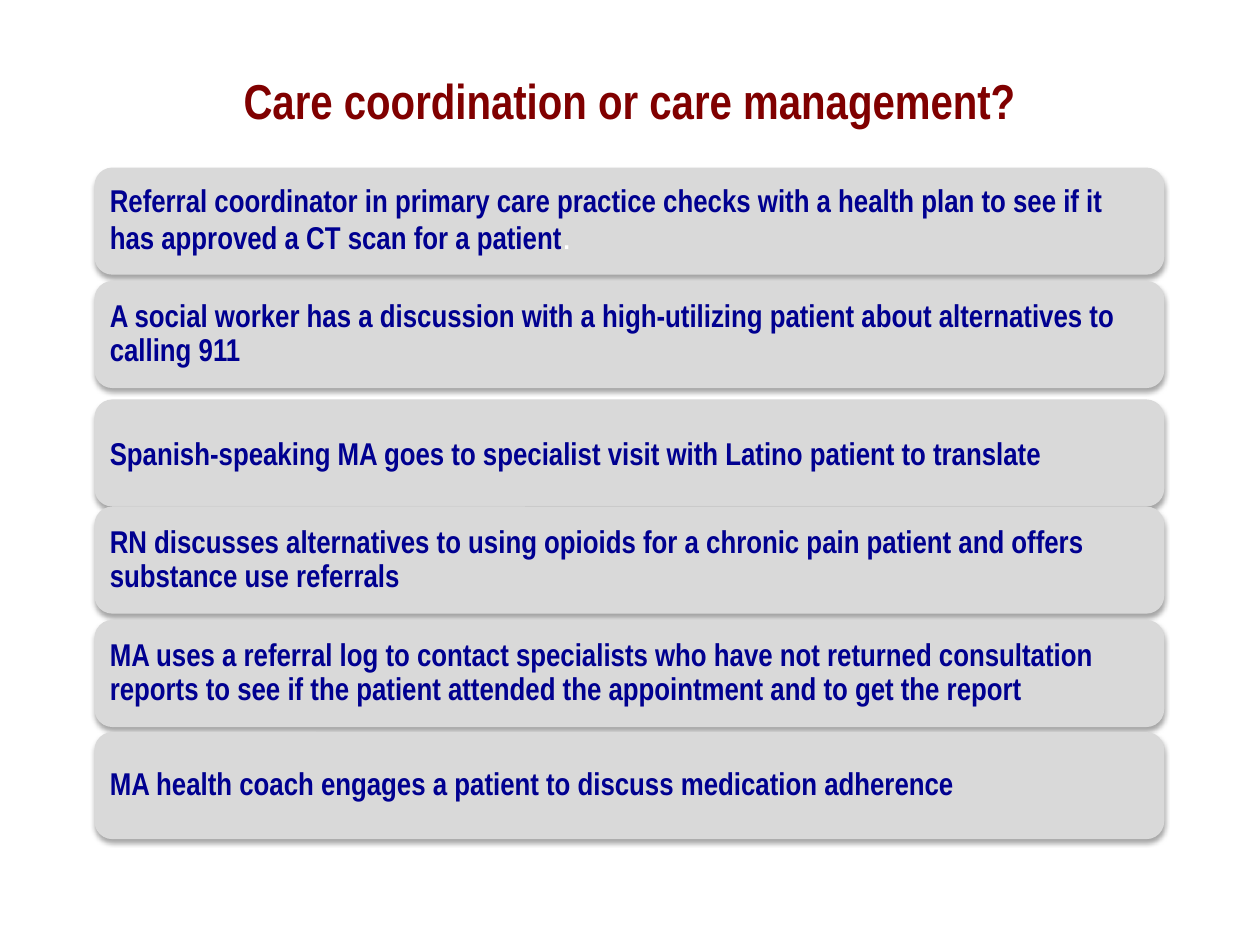
from dataclasses import dataclass

from lxml.etree import SubElement
from pptx import Presentation
from pptx.dml.color import RGBColor
from pptx.enum.shapes import MSO_SHAPE
from pptx.enum.text import MSO_ANCHOR, PP_ALIGN
from pptx.oxml.ns import qn
from pptx.shapes.autoshape import Shape
from pptx.slide import Slide
from pptx.util import Inches, Pt

COLORS = {
    "title": "800000",
    "card": "D9D9D9",
    "text": "000090",
    "period": "FFFFFF",
    "shadow": "000000",
}
FONT = "Arial Narrow"
CARD_LEFT, CARD_WIDTH, CARD_HEIGHT = 0.75, 8.49, 0.85


@dataclass
class Card:
    top: float
    text: str
    line_spacing: float = 0.9
    period: str = ""


CARDS = [
    Card(1.33, "Referral coordinator in primary care practice checks with a health plan "
         "to see if it has approved a CT scan for a patient", period="."),
    Card(2.23, "A social worker has a discussion with a high-utilizing patient about "
         "alternatives to calling 911"),
    Card(3.17, "Spanish-speaking MA goes to specialist visit with Latino patient to translate",
         line_spacing=1.0),
    Card(4.02, "RN discusses alternatives to using opioids for a chronic pain patient and "
         "offers substance use referrals"),
    Card(4.92, "MA uses a referral log to contact specialists who have not returned "
         "consultation reports to see if the patient attended the appointment and to get "
         "the report"),
    Card(5.81, "MA health coach engages a patient to discuss medication adherence"),
]


def color(name: str) -> RGBColor:
    return RGBColor.from_string(COLORS[name])


def style_font(font, name: str, size: float, color_name: str, bold: bool) -> None:
    font.name = name
    font.size = Pt(size)
    font.bold = bold
    font.color.rgb = color(color_name)


def add_shadow(shape: Shape) -> None:
    shape.shadow.inherit = False
    effects = shape.element.spPr.find(qn("a:effectLst"))
    shadow = SubElement(effects, qn("a:outerShdw"), blurRad=str(Pt(3.1)),
                        dist=str(Pt(1.8)), dir="5400000", rotWithShape="0")
    tint = SubElement(shadow, qn("a:srgbClr"), val=COLORS["shadow"])
    SubElement(tint, qn("a:alpha"), val="35000")


def add_title(page: Slide, text: str) -> None:
    box = page.shapes.add_textbox(Inches(0.33), Inches(0.17), Inches(9.33), Inches(1.25))
    frame = box.text_frame
    frame.word_wrap = True
    frame.vertical_anchor = MSO_ANCHOR.MIDDLE
    para = frame.paragraphs[0]
    para.text = text
    para.alignment = PP_ALIGN.CENTER
    style_font(para.font, FONT, 28, "title", True)


def add_card(page: Slide, card: Card) -> None:
    box = page.shapes.add_shape(MSO_SHAPE.ROUNDED_RECTANGLE, Inches(CARD_LEFT),
                                Inches(card.top), Inches(CARD_WIDTH), Inches(CARD_HEIGHT))
    box.fill.solid()
    box.fill.fore_color.rgb = color("card")
    box.line.fill.background()
    add_shadow(box)
    frame = box.text_frame
    frame.word_wrap = True
    frame.vertical_anchor = MSO_ANCHOR.MIDDLE
    frame.margin_left = frame.margin_right = Inches(0.08)
    frame.margin_top = frame.margin_bottom = Inches(0.04)
    para = frame.paragraphs[0]
    para.alignment = PP_ALIGN.LEFT
    para.line_spacing = card.line_spacing
    para.text = card.text
    style_font(para.font, FONT, 18, "text", True)
    if card.period:
        span = para.add_run()
        span.text = card.period
        style_font(span.font, "Arial", 20, "period", False)


def main() -> None:
    deck = Presentation()
    deck.slide_width = Inches(10)
    deck.slide_height = Inches(7.5)
    page = deck.slides.add_slide(deck.slide_layouts[6])
    add_title(page, "Care coordination or care management?")
    for card in CARDS:
        add_card(page, card)
    deck.save("out.pptx")


if __name__ == "__main__":
    main()
